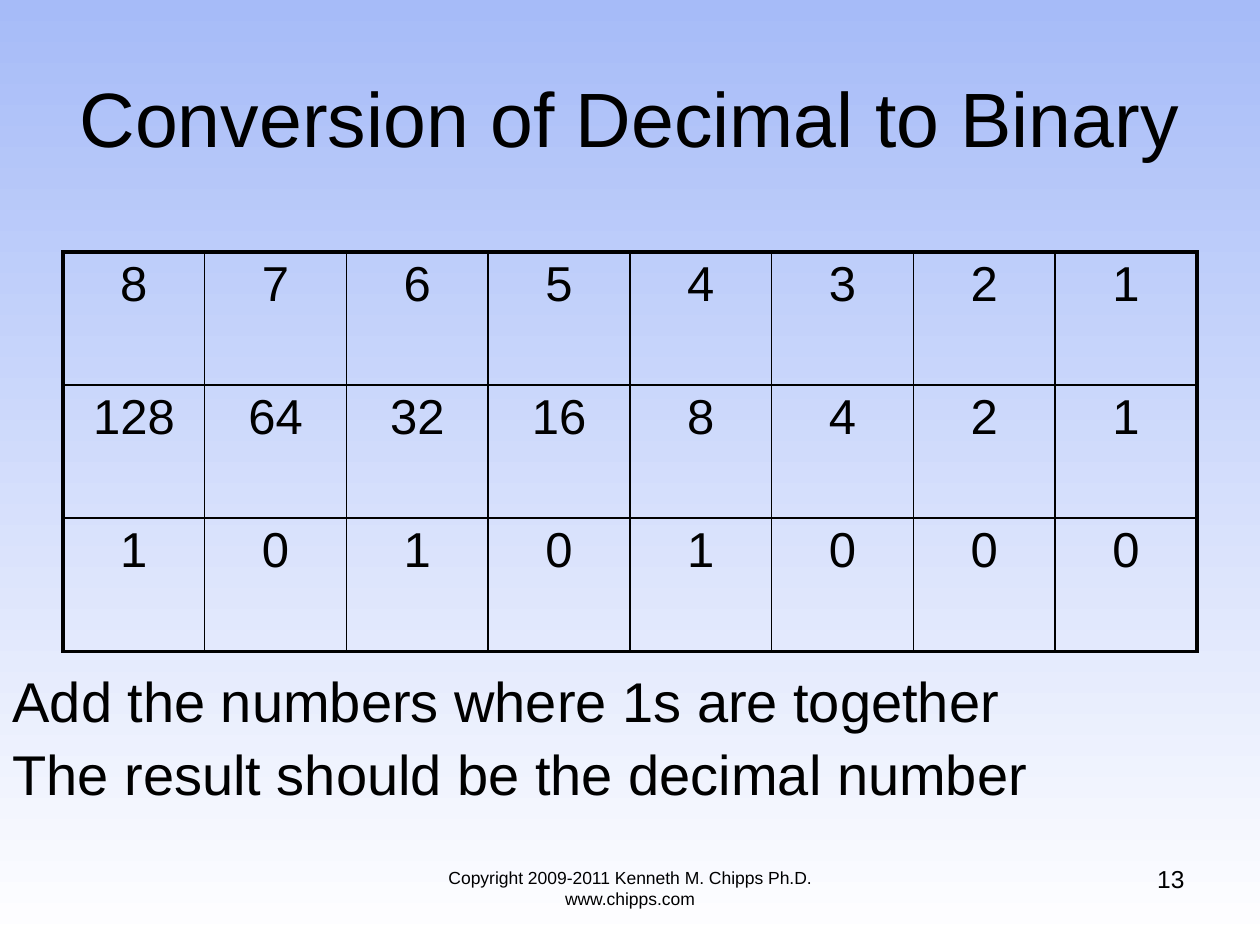
from lxml import etree
from pptx import Presentation
from pptx.dml.color import RGBColor
from pptx.enum.text import MSO_ANCHOR, MSO_AUTO_SIZE, PP_ALIGN
from pptx.oxml.ns import qn
from pptx.util import Cm, Pt

LEFT, CENTER, RIGHT = PP_ALIGN.LEFT, PP_ALIGN.CENTER, PP_ALIGN.RIGHT
TOP, MIDDLE = MSO_ANCHOR.TOP, MSO_ANCHOR.MIDDLE
NO_FIT = MSO_AUTO_SIZE.NONE
BLACK = RGBColor(0x00, 0x00, 0x00)
SKY = RGBColor(0xA6, 0xBB, 0xF8)
WHITE = RGBColor(0xFF, 0xFF, 0xFF)

BIT_ROWS = [
    ["8", "7", "6", "5", "4", "3", "2", "1"],
    ["128", "64", "32", "16", "8", "4", "2", "1"],
    ["1", "0", "1", "0", "1", "0", "0", "0"],
]
STEPS = ["Add the numbers where 1s are together",
         "The result should be the decimal number"]


def write(p, text, size, font="Arial", color=BLACK, align=LEFT, before=0, spacing=1.0):
    p.alignment = align
    p.space_before = Pt(before)
    p.line_spacing = spacing
    r = p.add_run()
    r.text = text
    r.font.name = font
    r.font.size = Pt(size)
    r.font.color.rgb = color


class SlideBuilder:
    thin, thick = 1, 2.25

    def __init__(self, prs):
        self.s = prs.slides.add_slide(prs.slide_layouts[1])

    def background(self, start, end):
        fill = self.s.background.fill
        fill.gradient()
        fill.gradient_angle = 270
        for stop, color in zip(fill.gradient_stops, (start, end)):
            stop.color.rgb = color

    def place(self, sp, box, anchor):
        sp.left, sp.top, sp.width, sp.height = (Cm(v) for v in box)
        tf = sp.text_frame
        tf.auto_size = NO_FIT
        tf.word_wrap = True
        tf.vertical_anchor = anchor
        return tf

    def title(self, text, box):
        tf = self.place(self.s.shapes.title, box, MIDDLE)
        write(tf.paragraphs[0], text, 44, align=CENTER)

    def body(self, lines, box):
        tf = self.place(self.s.placeholders[1], box, TOP)
        for i, line in enumerate(lines):
            p = tf.add_paragraph() if i else tf.paragraphs[0]
            write(p, line, 32, before=7.4, spacing=0.9)
            pPr = p._p.get_or_add_pPr()
            pPr.set("marL", str(Cm(0.95)))
            pPr.set("indent", str(-Cm(0.95)))
            etree.SubElement(pPr, qn("a:buNone"))

    def textbox(self, text, box, size, align):
        sp = self.s.shapes.add_textbox(*(Cm(v) for v in box))
        write(self.place(sp, box, TOP).paragraphs[0], text, size, align=align)

    def border(self, cell, side, width):
        ln = etree.SubElement(cell._tc.get_or_add_tcPr(), qn("a:ln" + side), w=str(Pt(width)))
        fill = etree.SubElement(ln, qn("a:solidFill"))
        etree.SubElement(fill, qn("a:srgbClr"), val=str(BLACK))

    def table(self, rows, box):
        n_rows, n_cols = len(rows), len(rows[0])
        table = self.s.shapes.add_table(n_rows, n_cols, *(Cm(v) for v in box)).table
        table.first_row = table.horz_banding = False
        for i, row in enumerate(rows):
            for j, text in enumerate(row):
                cell = table.cell(i, j)
                cell.margin_left = cell.margin_right = Cm(0.2)
                cell.margin_top = cell.margin_bottom = Cm(0.1)
                write(cell.text_frame.paragraphs[0], text, 28, align=CENTER)
                outer = {"L": j == 0, "R": j == n_cols - 1,
                         "T": i == 0, "B": i == n_rows - 1}
                for side, is_outer in outer.items():
                    self.border(cell, side, self.thick if is_outer else self.thin)
                cell.fill.background()


def main():
    prs = Presentation()
    prs.slide_width, prs.slide_height = Cm(25.4), Cm(19.05)
    b = SlideBuilder(prs)
    b.background(SKY, WHITE)
    b.title("Conversion of Decimal to Binary", (1.27, 0.76, 22.86, 3.18))
    b.table(BIT_ROWS, (1.27, 5.08, 22.86, 8.05))
    b.textbox("Copyright 2009-2011 Kenneth M. Chipps Ph.D. www.chipps.com",
              (7.62, 17.35, 10.16, 1.32), 10, CENTER)
    b.body(STEPS, (0, 13.46, 22.86, 3.99))
    b.textbox("13", (18.21, 17.3, 5.92, 1.32), 14, RIGHT)
    prs.save("out.pptx")


if __name__ == "__main__":
    main()
